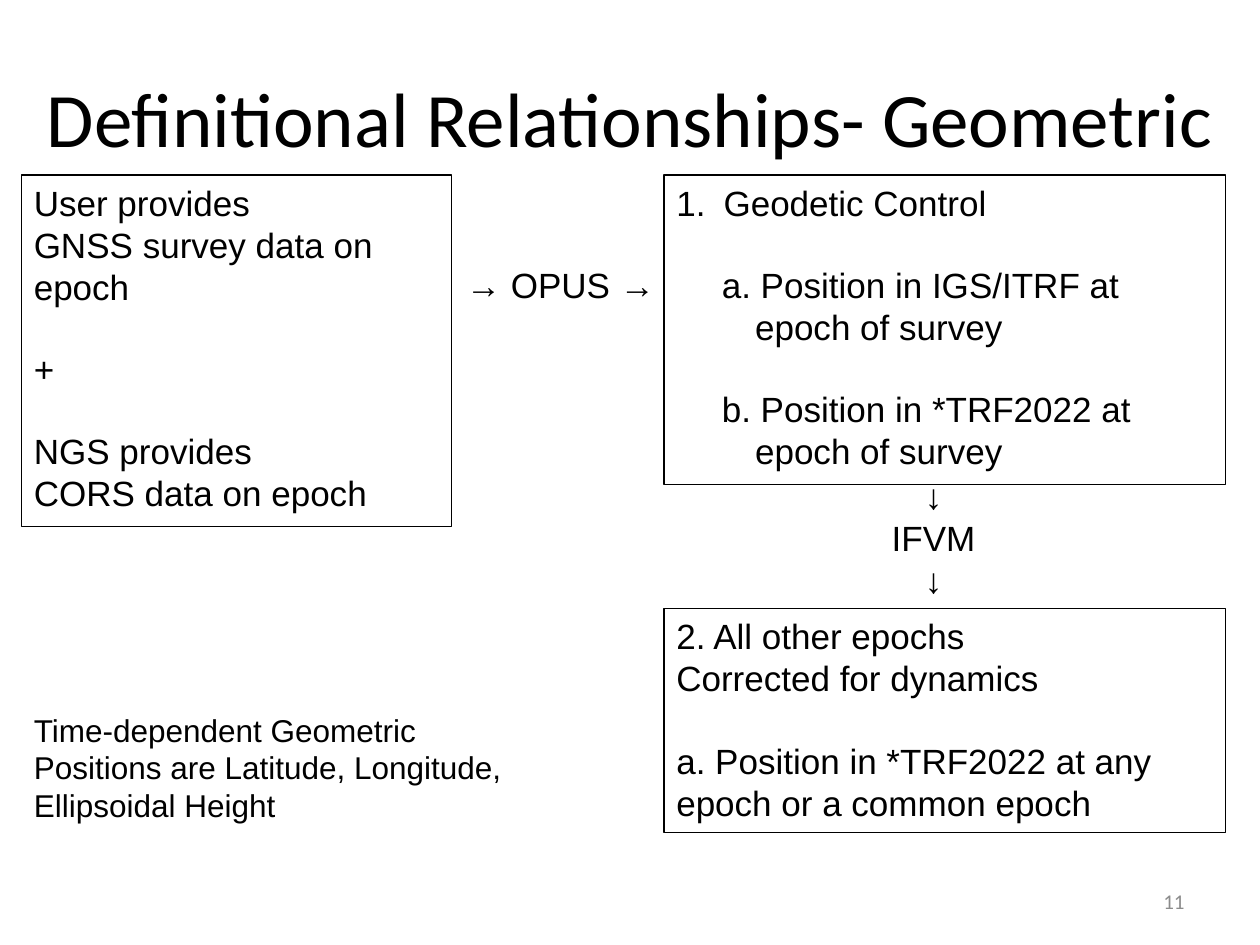
from lxml.etree import SubElement
from pptx import Presentation
from pptx.dml.color import RGBColor
from pptx.enum.shapes import MSO_SHAPE
from pptx.enum.text import MSO_ANCHOR, PP_ALIGN
from pptx.oxml.ns import qn
from pptx.util import Pt

COLOURS = {"ink": "000000", "muted": "8C8C8C"}
BLANK_LINE = 23  # height of one 20 pt line


def colour(name):
    return RGBColor.from_string(COLOURS[name])


def write(frame, text, first=False, size=20, font="Arial", ink="ink",
          align=PP_ALIGN.LEFT, before=0, margin=0, hanging=0, numbered=False):
    para = frame.paragraphs[0] if first else frame.add_paragraph()
    para.alignment = align
    if before:
        para.space_before = Pt(before)
    properties = para._p.get_or_add_pPr()
    if margin:
        properties.set("marL", str(Pt(margin)))
        properties.set("indent", str(-Pt(hanging)))
    if numbered:
        SubElement(properties, qn("a:buFont"), typeface="+mj-lt")
        SubElement(properties, qn("a:buAutoNum"), type="arabicPeriod")
    span = para.add_run()
    span.text = text
    span.font.size = Pt(size)
    span.font.name = font
    span.font.color.rgb = colour(ink)


def add_frame(page, box, framed=False, anchor=MSO_ANCHOR.TOP):
    place = [Pt(length) for length in box]
    if framed:
        shape = page.shapes.add_shape(MSO_SHAPE.RECTANGLE, *place)
        shape.shadow.inherit = False
        shape.fill.background()
        shape.line.color.rgb = colour("ink")
        shape.line.width = Pt(0.75)
    else:
        shape = page.shapes.add_textbox(*place)
    frame = shape.text_frame
    frame.word_wrap = True
    frame.vertical_anchor = anchor
    return frame


def add_title(page, box):
    title = page.shapes.title
    title.left, title.top, title.width, title.height = map(Pt, box)
    title.text_frame.vertical_anchor = MSO_ANCHOR.MIDDLE
    write(title.text_frame, "Definitional Relationships- Geometric", first=True,
          size=44, font="Calibri", align=PP_ALIGN.CENTER)


def add_inputs(page, box):
    frame = add_frame(page, box, framed=True)
    write(frame, "User provides", first=True)
    write(frame, "GNSS survey data on epoch")
    write(frame, "+", before=BLANK_LINE)
    write(frame, "NGS provides", before=BLANK_LINE)
    write(frame, "CORS data on epoch")


def add_geodetic_control(page, box):
    frame = add_frame(page, box, framed=True)
    write(frame, "Geodetic Control", first=True, margin=27, hanging=27, numbered=True)
    for text in ("a. Position in IGS/ITRF at epoch of survey",
                 "b. Position in *TRF2022 at epoch of survey"):
        write(frame, text, before=BLANK_LINE, margin=45, hanging=19)


def add_other_epochs(page, box):
    frame = add_frame(page, box, framed=True)
    write(frame, "2. All other epochs", first=True)
    write(frame, "Corrected for dynamics")
    write(frame, "a. Position in *TRF2022 at any epoch or a common epoch",
          before=BLANK_LINE)


def add_tool_labels(page, across_box, down_box):
    write(add_frame(page, across_box), "→ OPUS →", first=True)
    frame = add_frame(page, down_box)
    for index, text in enumerate(("↓", "IFVM", "↓")):
        write(frame, text, first=index == 0, align=PP_ALIGN.CENTER)


def add_note(page, box):
    write(add_frame(page, box),
          "Time-dependent Geometric Positions are Latitude, Longitude, "
          "Ellipsoidal Height", first=True, size=18)


def add_page_number(page, box):
    write(add_frame(page, box, anchor=MSO_ANCHOR.MIDDLE), "11", first=True,
          size=12, font="Calibri", ink="muted", align=PP_ALIGN.RIGHT)


def main():
    deck = Presentation()
    deck.slide_width, deck.slide_height = Pt(720), Pt(540)
    page = deck.slides.add_slide(deck.slide_layouts[5])

    # Heading and page number
    add_title(page, (0, 21.6, 720, 90))
    add_page_number(page, (516, 500.5, 168, 28.8))

    # Left column
    left, top = 12.24, 100
    add_inputs(page, (left, top, 246, 201))
    add_note(page, (left, 402.5, 298, 72.7))

    # Right column
    right, width = 379.4, 321
    add_geodetic_control(page, (right, top, width, 177))
    add_other_epochs(page, (right, 347.8, width, 128))

    # Tools linking the boxes
    add_tool_labels(page, (259.2, 147, 143.3, 31.7), (483.8, 267.8, 99.4, 80))

    deck.save("out.pptx")


if __name__ == "__main__":
    main()
